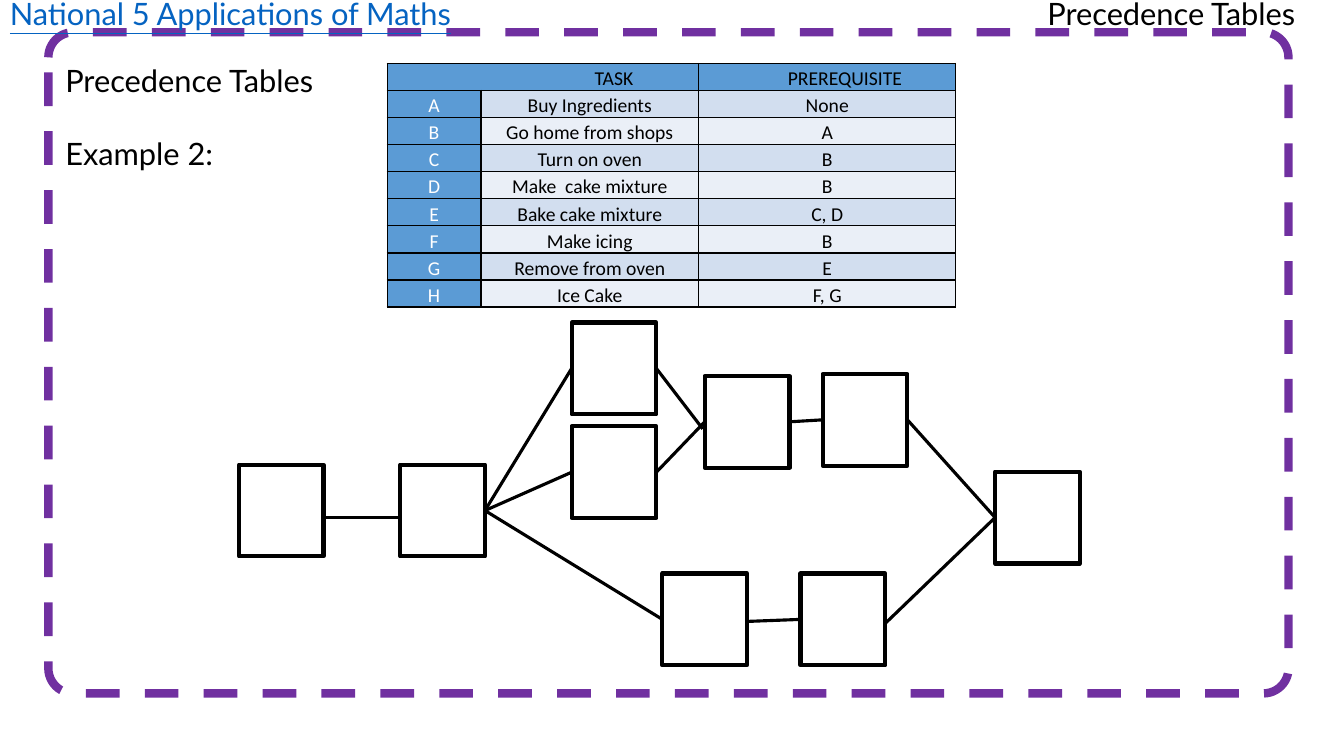
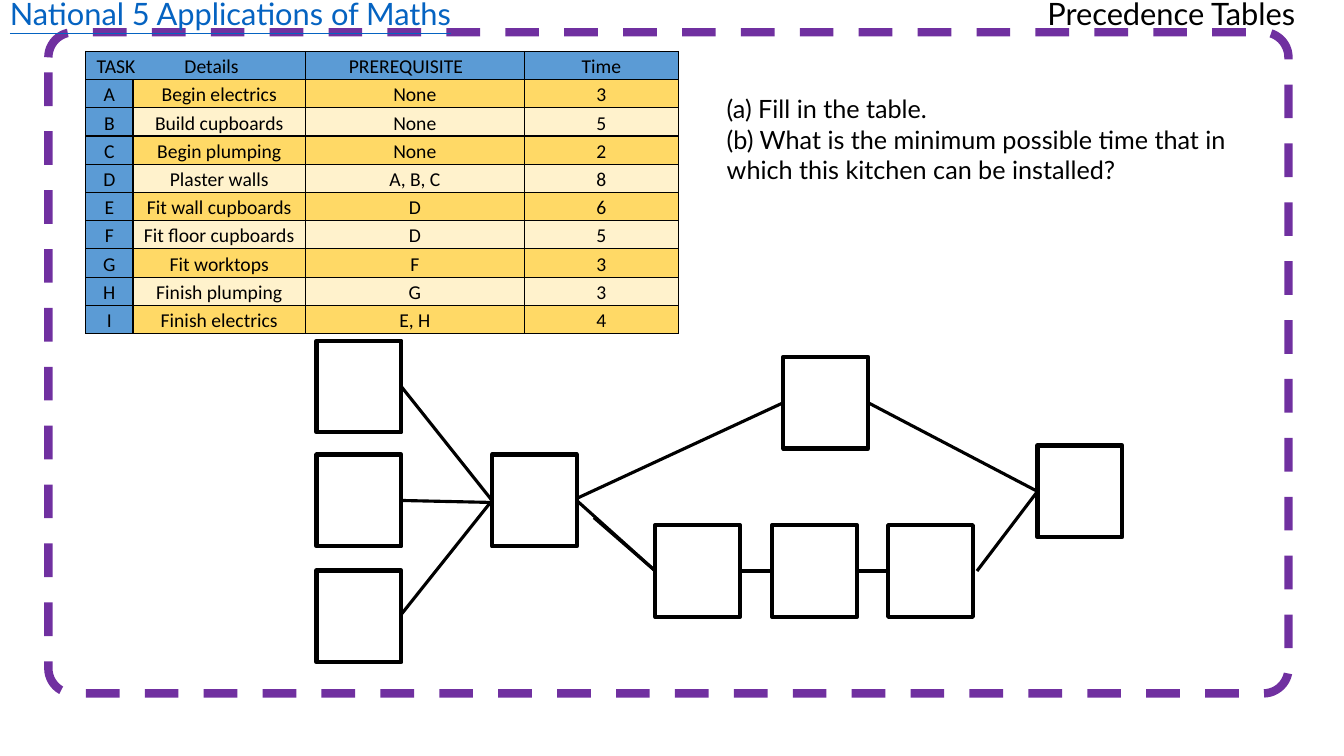
from dataclasses import dataclass

from lxml import etree
from pptx import Presentation
from pptx.dml.color import RGBColor
from pptx.enum.dml import MSO_LINE
from pptx.enum.shapes import MSO_CONNECTOR, MSO_SHAPE
from pptx.enum.text import MSO_AUTO_SIZE, PP_ALIGN
from pptx.oxml.ns import qn
from pptx.slide import Slide
from pptx.table import _Cell
from pptx.text.text import _Paragraph
from pptx.util import Inches, Pt

DASH = MSO_LINE.DASH
STRAIGHT = MSO_CONNECTOR.STRAIGHT
RECTANGLE = MSO_SHAPE.RECTANGLE
ROUNDED_RECTANGLE = MSO_SHAPE.ROUNDED_RECTANGLE
FIT_SHAPE = MSO_AUTO_SIZE.SHAPE_TO_FIT_TEXT
CENTER, LEFT = PP_ALIGN.CENTER, PP_ALIGN.LEFT

BOX_WIDTH, BOX_HEIGHT = 0.84, 0.91


@dataclass(frozen=True)
class Theme:
    black: str = "000000"
    white: str = "FFFFFF"
    frame: str = "7030A0"
    link: str = "0563C1"
    header: str = "5B9BD5"
    blue_bands: tuple[str, str] = ("D2DEEF", "EAEFF7")
    gold_bands: tuple[str, str] = ("FFD966", "FFF2CC")
    text_font: str = "Lato"
    table_font: str = "Calibri"
    title_size: float = 22
    question_size: float = 18
    table_size: float = 14
    frame_line: float = 6
    box_line: float = 3
    link_line: float = 2.25
    cell_line: float = 1


THEME = Theme()


@dataclass(frozen=True)
class TextBlock:
    left: float
    top: float
    width: float
    height: float
    lines: tuple[str, ...]
    size: float = THEME.title_size
    color: str = THEME.black
    underline: bool = False
    wrap: bool = False
    gap: float = 0


@dataclass(frozen=True)
class Heading:
    text: str
    alignment: PP_ALIGN = CENTER
    indent: float = 0
    hanging: float = 0


@dataclass(frozen=True)
class TaskTable:
    left: float
    top: float
    columns: tuple[float, ...]
    row_height: float
    headings: tuple[Heading, ...]
    rows: tuple[tuple[str, ...], ...]
    bands: tuple[str, str]
    letter_color: str


@dataclass(frozen=True)
class Link:
    start: str
    end: str
    start_shift: tuple[float, float] = (0, 0)
    end_shift: tuple[float, float] = (0, 0)


@dataclass(frozen=True)
class Network:
    boxes: dict[str, tuple[float, float]]
    links: tuple[Link, ...]


HEADERS = (
    TextBlock(10.29, -0.1, 2.74, 0.47, ("Precedence Tables",)),
    TextBlock(0, -0.1, 4.63, 0.47, ("National 5 Applications of Maths",),
              color=THEME.link, underline=True),
)

EXAMPLE = TextBlock(0.55, 0.56, 2.74, 1.21, ("Precedence Tables", "Example 2:"), gap=26)

QUESTIONS = TextBlock(
    7.11, 0.88, 5.4, 1.01,
    ("(a) Fill in the table.",
     "(b) What is the minimum possible time that in which this kitchen can be installed?"),
    size=THEME.question_size, wrap=True)

CAKE_TABLE = TaskTable(
    3.84, 0.63, (0.93, 2.16, 2.55), 0.25,
    (Heading("TASK", indent=1.41), Heading("PREREQUISITE", indent=0.35)),
    (
        ("A", "Buy Ingredients", "None"),
        ("B", "Go home from shops", "A"),
        ("C", "Turn on oven", "B"),
        ("D", "Make  cake mixture", "B"),
        ("E", "Bake cake mixture", "C, D"),
        ("F", "Make icing", "B"),
        ("G", "Remove from oven", "E"),
        ("H", "Ice Cake", "F, G"),
    ),
    THEME.blue_bands, THEME.white)

KITCHEN_TABLE = TaskTable(
    0.85, 0.51, (0.47, 1.71, 2.17, 1.53), 0.28,
    (Heading("TASK\tDetails", LEFT, 0.91, 0.87),
     Heading("PREREQUISITE", LEFT, 0.36), Heading("Time")),
    (
        ("A", "Begin electrics", "None", "3"),
        ("B", "Build cupboards", "None", "5"),
        ("C", "Begin plumping", "None", "2"),
        ("D", "Plaster walls", "A, B, C", "8"),
        ("E", "Fit wall cupboards", "D", "6"),
        ("F", "Fit floor cupboards", "D", "5"),
        ("G", "Fit worktops", "F", "3"),
        ("H", "Finish plumping", "G", "3"),
        ("I", "Finish electrics", "E, H", "4"),
    ),
    THEME.gold_bands, THEME.black)

CAKE_NETWORK = Network(
    {
        "far left": (2.37, 4.61), "left": (3.97, 4.61),
        "top": (5.67, 3.2), "middle": (5.67, 4.23),
        "upper left": (6.99, 3.73), "upper right": (8.16, 3.71),
        "lower left": (6.57, 5.69), "lower right": (7.94, 5.69),
        "far right": (9.87, 4.68),
    },
    (
        Link("far left", "left", (0, 0.07), (0, 0.07)),
        Link("left", "top"),
        Link("left", "middle"),
        Link("left", "lower left"),
        Link("top", "upper left", end_shift=(-0.02, 0.07)),
        Link("middle", "upper left"),
        Link("upper left", "upper right"),
        Link("lower left", "lower right", (0, 0.02)),
        Link("lower right", "far right", (0, 0.04)),
        Link("upper right", "far right"),
    ))

KITCHEN_NETWORK = Network(
    {
        "left top": (3.14, 3.38), "left middle": (3.14, 4.51),
        "left bottom": (3.14, 5.66), "center": (4.88, 4.51),
        "upper": (7.77, 3.54), "lower left": (6.5, 5.21),
        "lower middle": (7.66, 5.21), "lower right": (8.81, 5.21),
        "far right": (10.29, 4.42),
    },
    (
        Link("left top", "center"),
        Link("left middle", "center", end_shift=(0, 0.02)),
        Link("left bottom", "center", (0, -0.02)),
        Link("center", "upper", (0, -0.02)),
        Link("center", "lower left"),
        Link("center", "lower left", (0.17, 0.17)),
        Link("lower left", "lower middle"),
        Link("lower middle", "lower right"),
        Link("lower right", "far right", (0.04, 0)),
        Link("upper", "far right"),
    ))


def format_runs(paragraph: _Paragraph, font_name: str, size: float, color: str,
                underline: bool = False) -> None:
    for run in paragraph.runs:
        run.font.name = font_name
        run.font.size = Pt(size)
        run.font.color.rgb = RGBColor.from_string(color)
        if underline:
            run.font.underline = True


def add_text(slide: Slide, block: TextBlock) -> None:
    shape = slide.shapes.add_textbox(
        Inches(block.left), Inches(block.top), Inches(block.width), Inches(block.height))
    text_frame = shape.text_frame
    text_frame.text = "\n".join(block.lines)
    text_frame.word_wrap = block.wrap
    text_frame.auto_size = FIT_SHAPE
    for index, paragraph in enumerate(text_frame.paragraphs):
        if index and block.gap:
            paragraph.space_before = Pt(block.gap)
        format_runs(paragraph, THEME.text_font, block.size, block.color, block.underline)


def add_outline(slide: Slide, kind: MSO_SHAPE, left: float, top: float, width: float,
                height: float, color: str, weight: float):
    shape = slide.shapes.add_shape(
        kind, Inches(left), Inches(top), Inches(width), Inches(height))
    shape.shadow.inherit = False
    shape.fill.background()
    shape.line.color.rgb = RGBColor.from_string(color)
    shape.line.width = Pt(weight)
    return shape


def add_base(presentation: Presentation) -> Slide:
    slide = presentation.slides.add_slide(presentation.slide_layouts[6])
    frame = add_outline(slide, ROUNDED_RECTANGLE, 0.48, 0.32, 12.3, 6.56,
                        THEME.frame, THEME.frame_line)
    frame.adjustments[0] = 0.038
    frame.line.dash_style = DASH
    for header in HEADERS:
        add_text(slide, header)
    return slide


def style_cell(cell: _Cell, heading: Heading, fill: str, color: str) -> None:
    cell.text_frame.text = heading.text
    cell.margin_left = cell.margin_right = Inches(0.07)
    cell.margin_top = cell.margin_bottom = 0
    paragraph = cell.text_frame.paragraphs[0]
    paragraph.alignment = heading.alignment
    paragraph.line_spacing = 1.15
    format_runs(paragraph, THEME.table_font, THEME.table_size, color)
    if heading.indent:
        properties = paragraph._p.get_or_add_pPr()
        properties.set("marL", str(Inches(heading.indent)))
        properties.set("indent", str(Inches(-heading.hanging)))
    add_borders(cell)
    cell.fill.solid()
    cell.fill.fore_color.rgb = RGBColor.from_string(fill)


def add_borders(cell: _Cell) -> None:
    properties = cell._tc.get_or_add_tcPr()
    for side in ("lnL", "lnR", "lnT", "lnB"):
        line = etree.SubElement(properties, qn(f"a:{side}"), w=str(Pt(THEME.cell_line)))
        fill = etree.SubElement(line, qn("a:solidFill"))
        etree.SubElement(fill, qn("a:srgbClr"), val=THEME.black)


def add_task_table(slide: Slide, data: TaskTable) -> None:
    row_count = len(data.rows) + 1
    table = slide.shapes.add_table(
        row_count, len(data.columns), Inches(data.left), Inches(data.top),
        Inches(sum(data.columns)), Inches(data.row_height * row_count)).table
    table.first_row = table.horz_banding = False
    for column, width in zip(table.columns, data.columns):
        column.width = Inches(width)
    for row in table.rows:
        row.height = Inches(data.row_height)
    first, *others = data.headings
    for index, heading in enumerate((first, Heading(""), *others)):
        style_cell(table.cell(0, index), heading, THEME.header, THEME.black)
    table.cell(0, 0).merge(table.cell(0, 1))
    for row_index, values in enumerate(data.rows, start=1):
        band = data.bands[(row_index - 1) % 2]
        for column_index, value in enumerate(values):
            is_letter = column_index == 0
            style_cell(table.cell(row_index, column_index), Heading(value),
                       THEME.header if is_letter else band,
                       data.letter_color if is_letter else THEME.black)


def add_network(slide: Slide, network: Network) -> None:
    for left, top in network.boxes.values():
        add_outline(slide, RECTANGLE, left, top, BOX_WIDTH, BOX_HEIGHT,
                    THEME.black, THEME.box_line)
    for link in network.links:
        start_left, start_top = network.boxes[link.start]
        end_left, end_top = network.boxes[link.end]
        connector = slide.shapes.add_connector(
            STRAIGHT,
            Inches(start_left + BOX_WIDTH + link.start_shift[0]),
            Inches(start_top + BOX_HEIGHT / 2 + link.start_shift[1]),
            Inches(end_left + link.end_shift[0]),
            Inches(end_top + BOX_HEIGHT / 2 + link.end_shift[1]))
        connector.line.color.rgb = RGBColor.from_string(THEME.black)
        connector.line.width = Pt(THEME.link_line)
        etree.SubElement(connector._element.spPr, qn("a:effectLst"))


def main() -> None:
    presentation = Presentation()
    presentation.slide_width = Inches(13.33)
    presentation.slide_height = Inches(7.5)
    for task_table, network, text in (
        (CAKE_TABLE, CAKE_NETWORK, EXAMPLE),
        (KITCHEN_TABLE, KITCHEN_NETWORK, QUESTIONS),
    ):
        slide = add_base(presentation)
        add_task_table(slide, task_table)
        add_network(slide, network)
        add_text(slide, text)
    presentation.save("out.pptx")


if __name__ == "__main__":
    main()
